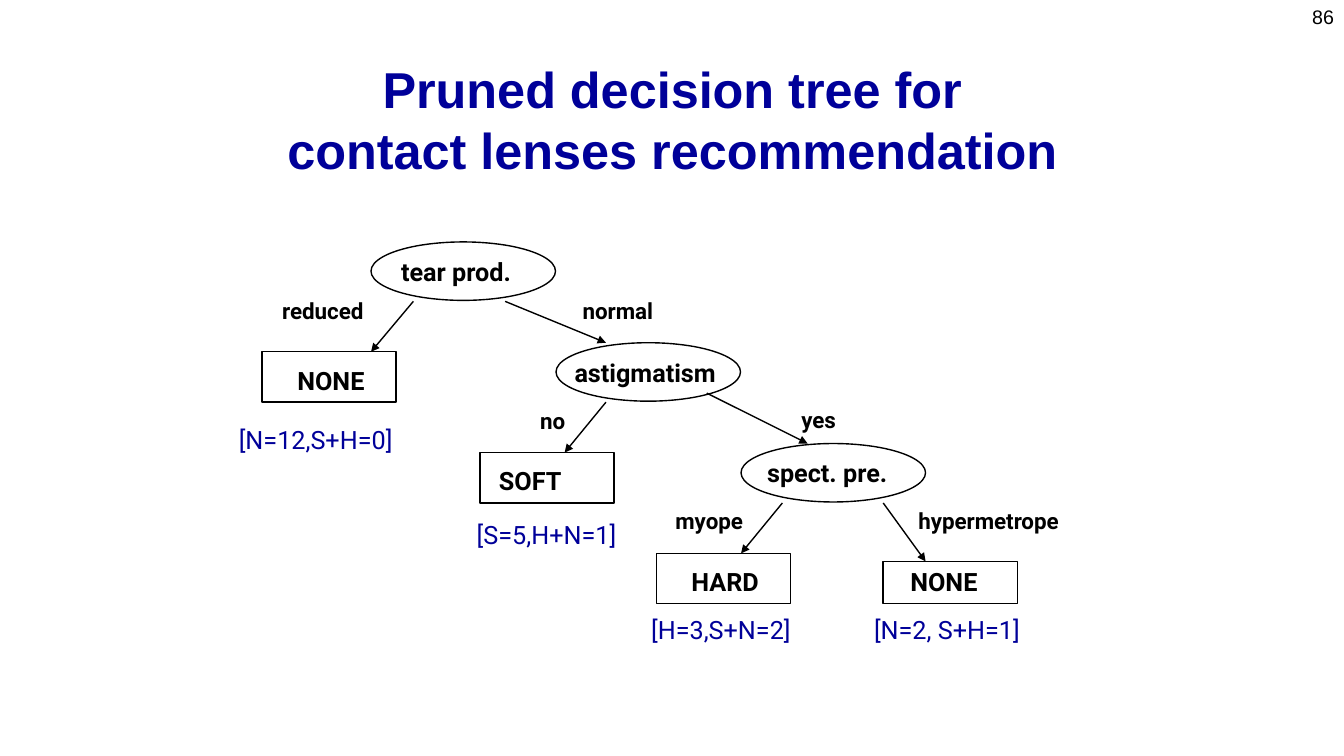
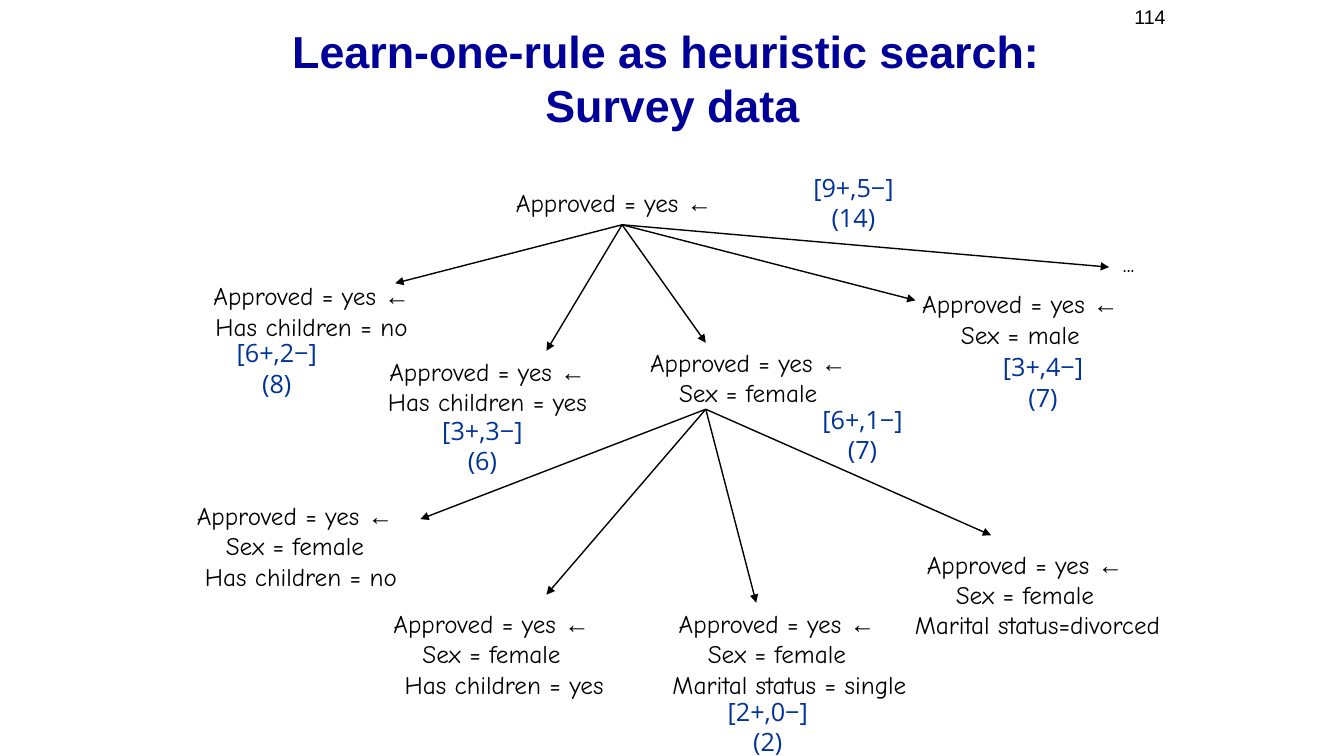
from pptx import Presentation
from pptx.dml.color import RGBColor
from pptx.enum.shapes import MSO_CONNECTOR, MSO_SHAPE
from pptx.enum.text import MSO_ANCHOR, MSO_AUTO_SIZE, PP_ALIGN
from pptx.oxml.ns import qn
from pptx.util import Inches, Pt
from lxml import etree

LEFT, CENTER, RIGHT = PP_ALIGN.LEFT, PP_ALIGN.CENTER, PP_ALIGN.RIGHT
TOP, MIDDLE, BOTTOM = MSO_ANCHOR.TOP, MSO_ANCHOR.MIDDLE, MSO_ANCHOR.BOTTOM
GROW, FIXED = MSO_AUTO_SIZE.SHAPE_TO_FIT_TEXT, MSO_AUTO_SIZE.NONE
STRAIGHT = MSO_CONNECTOR.STRAIGHT
OVAL, RECTANGLE = MSO_SHAPE.OVAL, MSO_SHAPE.RECTANGLE

BLACK = RGBColor(0x00, 0x00, 0x00)
WHITE = RGBColor(0xFF, 0xFF, 0xFF)
NAVY = RGBColor(0x00, 0x00, 0x99)
BLUE = RGBColor(0x00, 0x33, 0x99)

# Text styles: font, colour, alignment and frame settings
STYLES = {
    "number": {"font": {"name": "Arial", "size": Pt(14)}, "color": BLACK, "align": RIGHT,
               "frame": {"vertical_anchor": TOP, "word_wrap": True, "auto_size": FIXED}},
    "title": {"font": {"name": "Arial", "bold": True}, "color": NAVY, "align": CENTER,
              "frame": {"vertical_anchor": BOTTOM, "word_wrap": True, "auto_size": FIXED}},
    "node": {"font": {"name": "Roboto", "size": Pt(18), "bold": True}, "color": BLACK, "align": LEFT,
             "frame": {"vertical_anchor": MIDDLE, "word_wrap": False, "auto_size": GROW}},
    "branch": {"font": {"name": "Roboto", "size": Pt(16), "bold": True}, "color": BLACK, "align": LEFT,
               "frame": {"vertical_anchor": MIDDLE, "word_wrap": False, "auto_size": GROW}},
    "leaf count": {"font": {"name": "Roboto", "size": Pt(18)}, "color": NAVY, "align": LEFT,
                   "frame": {"vertical_anchor": TOP, "word_wrap": False, "auto_size": GROW}},
    "rule": {"font": {"name": "Comic Neue", "size": Pt(18)}, "color": BLACK, "align": CENTER,
             "frame": {"vertical_anchor": MIDDLE, "word_wrap": True, "auto_size": GROW}},
    "coverage": {"font": {"name": "Open Sans", "size": Pt(18)}, "color": BLUE, "align": CENTER,
                 "frame": {"vertical_anchor": MIDDLE, "word_wrap": True, "auto_size": GROW}},
}
IMPLIED_BY = "←"


def add_text(shapes, box, lines, style_name, size=None):
    style = STYLES[style_name]
    frame = shapes.add_textbox(*[Inches(v) for v in box]).text_frame
    for key, value in style["frame"].items():
        setattr(frame, key, value)
    for index, line in enumerate(lines):
        paragraph = frame.add_paragraph() if index else frame.paragraphs[0]
        paragraph.alignment = style["align"]
        head, arrow, _ = line.partition(IMPLIED_BY)
        for row, piece in enumerate(head.split("\n")):
            if row:
                paragraph.add_line_break()
            paragraph.add_run().text = piece
        if arrow:
            paragraph.add_run().text = arrow
        for run in paragraph.runs:
            for key, value in style["font"].items():
                setattr(run.font, key, value)
            run.font.color.rgb = style["color"]
            if size:
                run.font.size = size
            if run.text == IMPLIED_BY:
                run.font.name = "Arial"
    return frame


def add_arrow(shapes, start, end):
    arrow = shapes.add_connector(STRAIGHT, *[Inches(v) for v in (*start, *end)])
    arrow.line.color.rgb = BLACK
    arrow.line.width = Pt(1)
    etree.SubElement(arrow.line._get_or_add_ln(), qn("a:tailEnd"), type="triangle")
    etree.SubElement(arrow._element.spPr, qn("a:effectLst"))


deck = Presentation()
deck.slide_width, deck.slide_height = Inches(13.33), Inches(7.5)

# Shared page number and title
pages = [
    ("86", (10.22, 0, 3.11, 0.52),
     "Pruned decision tree for\ncontact lenses recommendation", (1.67, 0.58, 10, 1.25), Pt(36)),
    ("114", (9.33, 0, 2.33, 0.52),
     "Learn-one-rule as heuristic search: \nSurvey data", (1.67, 0.31, 10, 1.04), Pt(32)),
]
for number, number_box, title, title_box, title_size in pages:
    slide = deck.slides.add_slide(deck.slide_layouts[6])
    slide.background.fill.solid()
    slide.background.fill.fore_color.rgb = WHITE
    add_text(slide.shapes, number_box, [number], "number")
    add_text(slide.shapes, title_box, [title], "title", title_size)
lens_slide, survey_slide = deck.slides

# Decision tree: tests in ellipses, outcomes in rectangles
tree = lens_slide.shapes.add_group_shape().shapes
outlines = [(OVAL, 3.68 + 1.835 * level, 2.4 + level, 1.83, 0.58) for level in range(3)]
outlines += [
    (RECTANGLE, 2.6, 3.49, 1.33, 0.5),
    (RECTANGLE, 4.76, 4.49, 1.33, 0.5),
    (RECTANGLE, 6.51, 5.49, 1.33, 0.5),
    (RECTANGLE, 8.76, 5.57, 1.33, 0.42),
]
for kind, *box in outlines:
    outline = tree.add_shape(kind, *[Inches(v) for v in box])
    outline.shadow.inherit = False
    outline.fill.solid()
    outline.fill.fore_color.rgb = WHITE
    outline.line.color.rgb = BLACK
    outline.line.width = Pt(1)

# Decision tree: branches
for start, end in [
    ((4.1, 2.99), (3.68, 3.49)), ((5.01, 2.99), (6.01, 3.4)),
    ((6.01, 3.99), (5.6, 4.49)), ((7.01, 3.9), (8.01, 4.4)),
    ((7.76, 4.99), (7.35, 5.49)), ((8.76, 4.99), (9.18, 5.57)),
]:
    add_arrow(tree, start, end)

# Decision tree: labels
tree_labels = {
    "node": [
        ("tear prod.", 3.88, 2.49, 1.43), ("astigmatism", 5.6, 3.49, 1.66),
        ("spect. pre.", 7.51, 4.49, 1.45), ("NONE", 2.85, 3.57, 0.92),
        ("SOFT", 4.85, 4.57, 0.87), ("HARD", 6.76, 5.57, 0.93), ("NONE", 8.93, 5.57, 0.92),
    ],
    "branch": [
        ("reduced", 2.7, 2.9, 1.06), ("normal", 5.68, 2.9, 0.94),
        ("no", 5.26, 3.99, 0.47), ("yes", 7.85, 3.98, 0.57),
        ("myope", 6.6, 4.98, 0.92), ("hypermetrope", 9.01, 4.98, 1.7),
    ],
    "leaf count": [
        ("[N=12,S+H=0]", 2.27, 4.16, 1.79), ("[N=2, S+H=1]", 8.57, 6.05, 1.72),
    ],
}
for style_name, labels in tree_labels.items():
    height = 0.37 if style_name == "branch" else 0.4
    for label, left, top, width in labels:
        add_text(tree, (left, top, width, height), [label], style_name)

# Decision tree: tightly spaced leaf counts
for count, left, top in [("[S=5,H+N=1]", 4.63, 5.14), ("[H=3,S+N=2]", 6.36, 6.08)]:
    paragraph = add_text(tree, (left, top, 1.65, 0.37), [count], "leaf count").paragraphs[0]
    paragraph.line_spacing = 0.9
    paragraph.space_before = Pt(3.6)

# Rule search: rules, with the indent of a third line
search = survey_slide.shapes
RULE_HEAD = "Approved = yes " + IMPLIED_BY
rules = [
    ((4.93, 1.81, 2.32, 0.4), [], 0),
    ((1.93, 2.73, 2.32, 0.71), ["Has children = no"], 0),
    ((3.66, 3.48, 2.35, 0.71), ["Has children = yes"], 0),
    ((6.26, 3.39, 2.32, 0.71), ["Sex = female"], 0),
    ((8.96, 2.81, 2.32, 0.71), ["Sex = male"], 0),
    ((1.64, 4.91, 2.57, 1.01), ["Sex = female", "Has children = no"], 0.12),
    ((3.59, 5.98, 2.57, 1.01), ["Sex = female", "Has children = yes"], 0.25),
    ((6.18, 5.98, 3.05, 1.01), ["Sex = female", "Marital status = single"], 0.25),
    ((8.54, 5.39, 3.25, 1.01), ["Sex = female", "Marital status=divorced"], 0.25),
]
for box, conditions, indent in rules:
    rule = add_text(search, box, [RULE_HEAD] + conditions, "rule")
    if indent:
        rule.paragraphs[-1]._p.get_or_add_pPr().set("marL", str(Inches(indent)))
add_text(search, (11, 2.4, 0.39, 0.4), ["..."], "rule")

# Rule search: refinements fanning out from the two expanded rules
refinements = {
    (6.17, 2.23): [(3.92, 2.81), (5.42, 3.48), (7, 3.4), (9.08, 2.98), (11, 2.65)],
    (7, 4.06): [(4.17, 5.15), (5.42, 5.9), (7.5, 5.98), (9.83, 5.31)],
}
for start, ends in refinements.items():
    for end in ends:
        add_arrow(search, start, end)

# Rule search: covered examples
for coverage, left, top, width in [
    ("[9+,5−] (14)", 7.75, 1.81, 1.43), ("[6+,2−] (8)", 2.09, 3.45, 1.31),
    ("[3+,3−] (6)", 4.13, 4.22, 1.31), ("[6+,1−] (7)", 7.9, 4.11, 1.31),
    ("[3+,4−] (7)", 9.69, 3.59, 1.31), ("[2+,0−] (2)", 6.96, 7.01, 1.31),
]:
    add_text(search, (left, top, width, 0.4), [coverage], "coverage")

deck.save("out.pptx")
